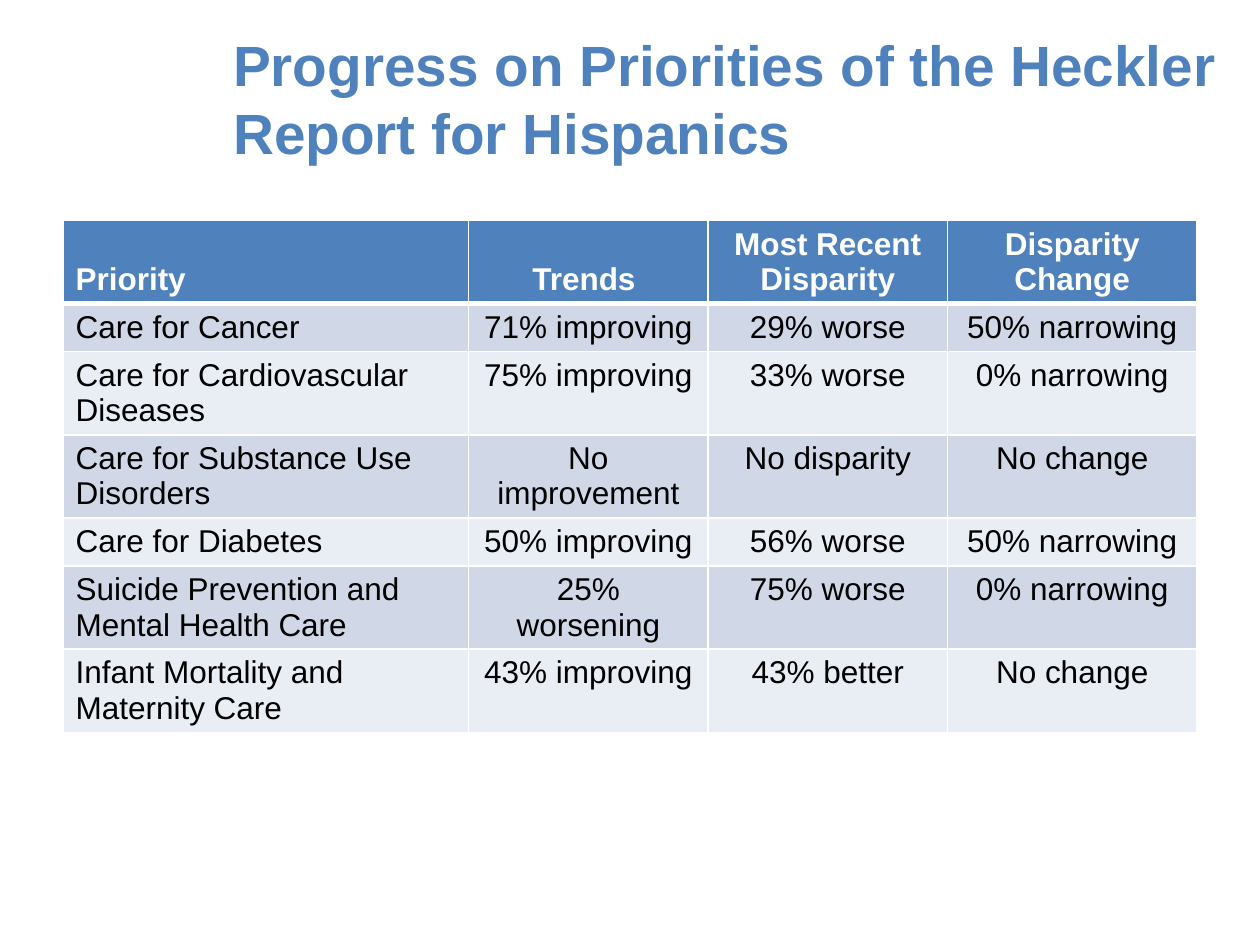
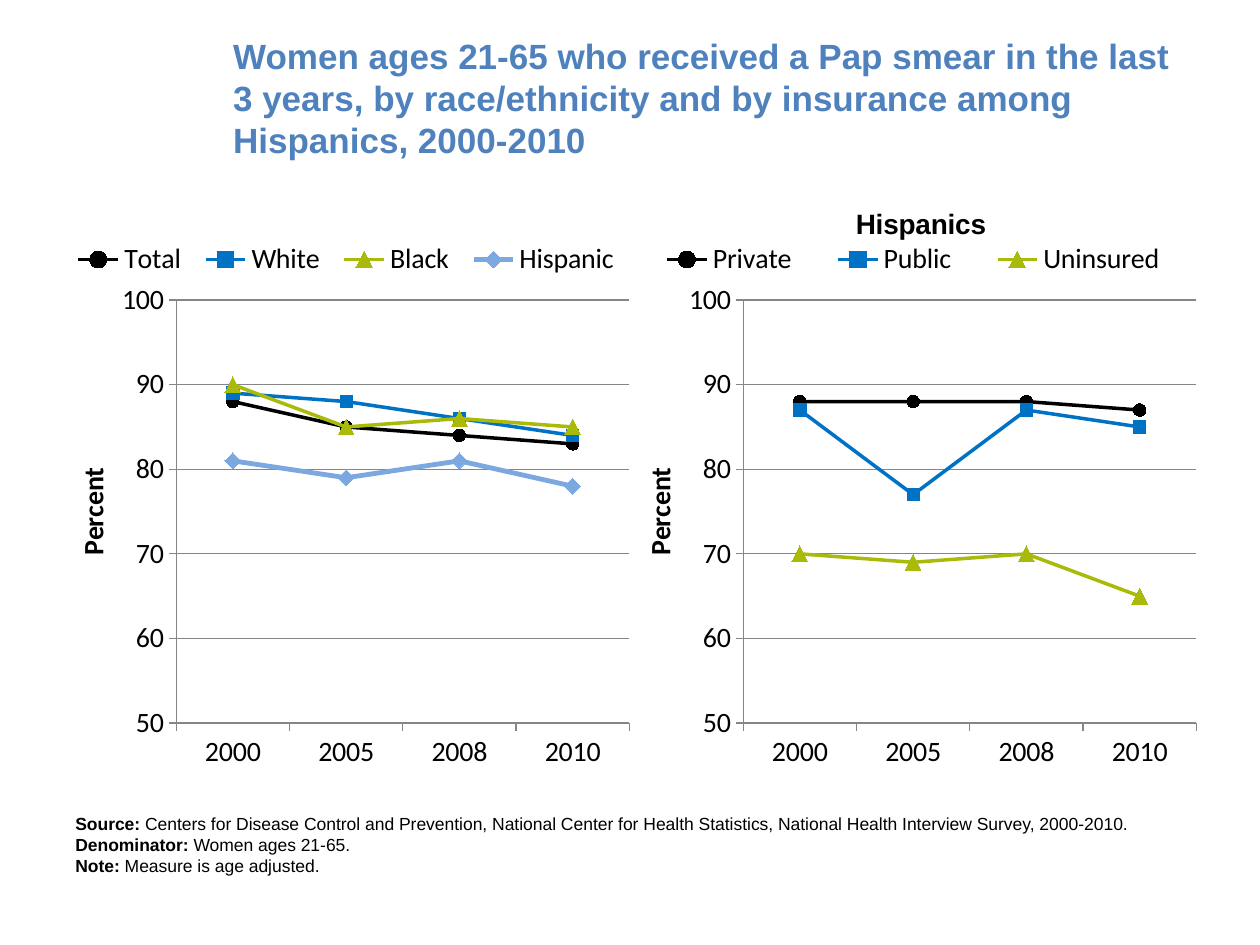
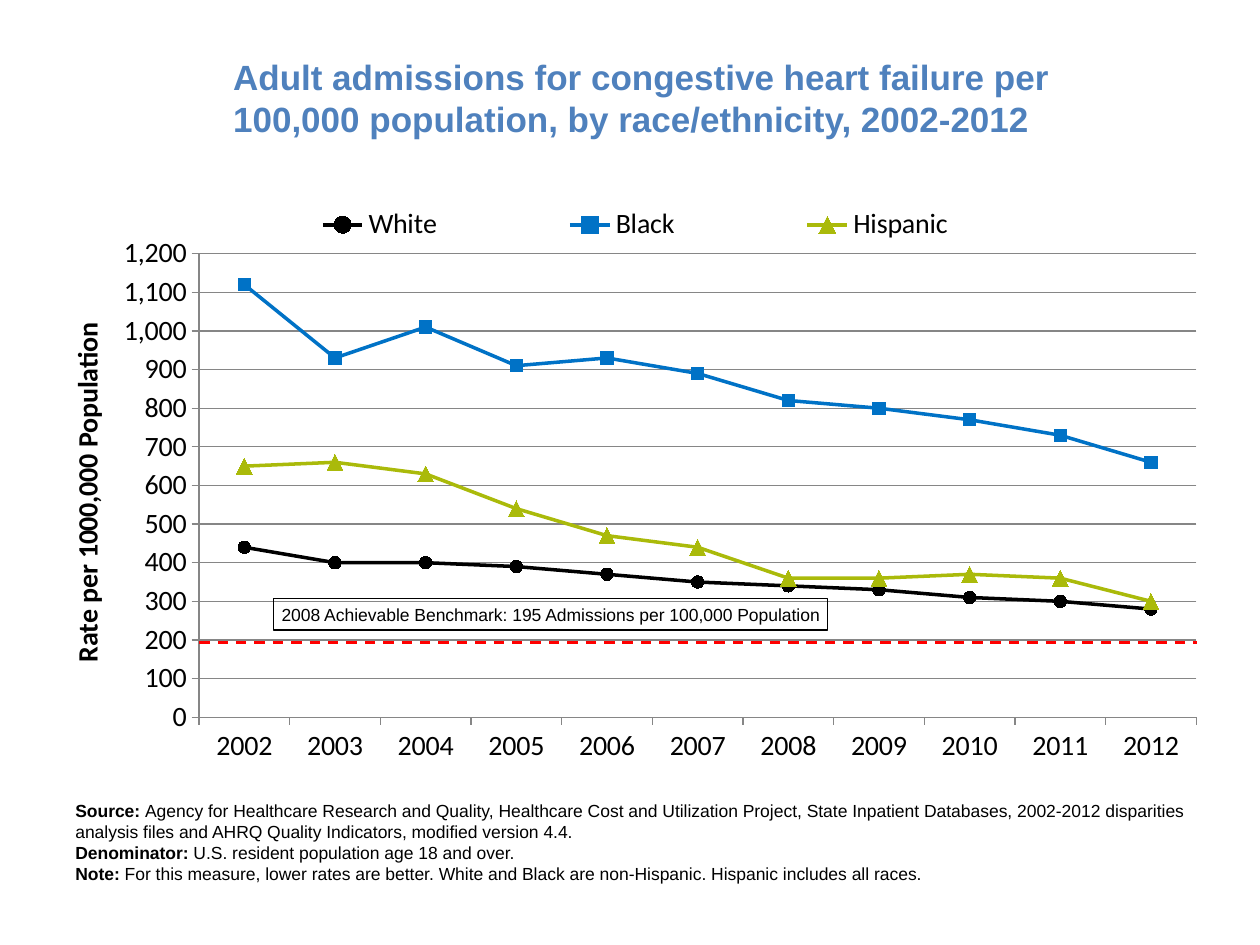
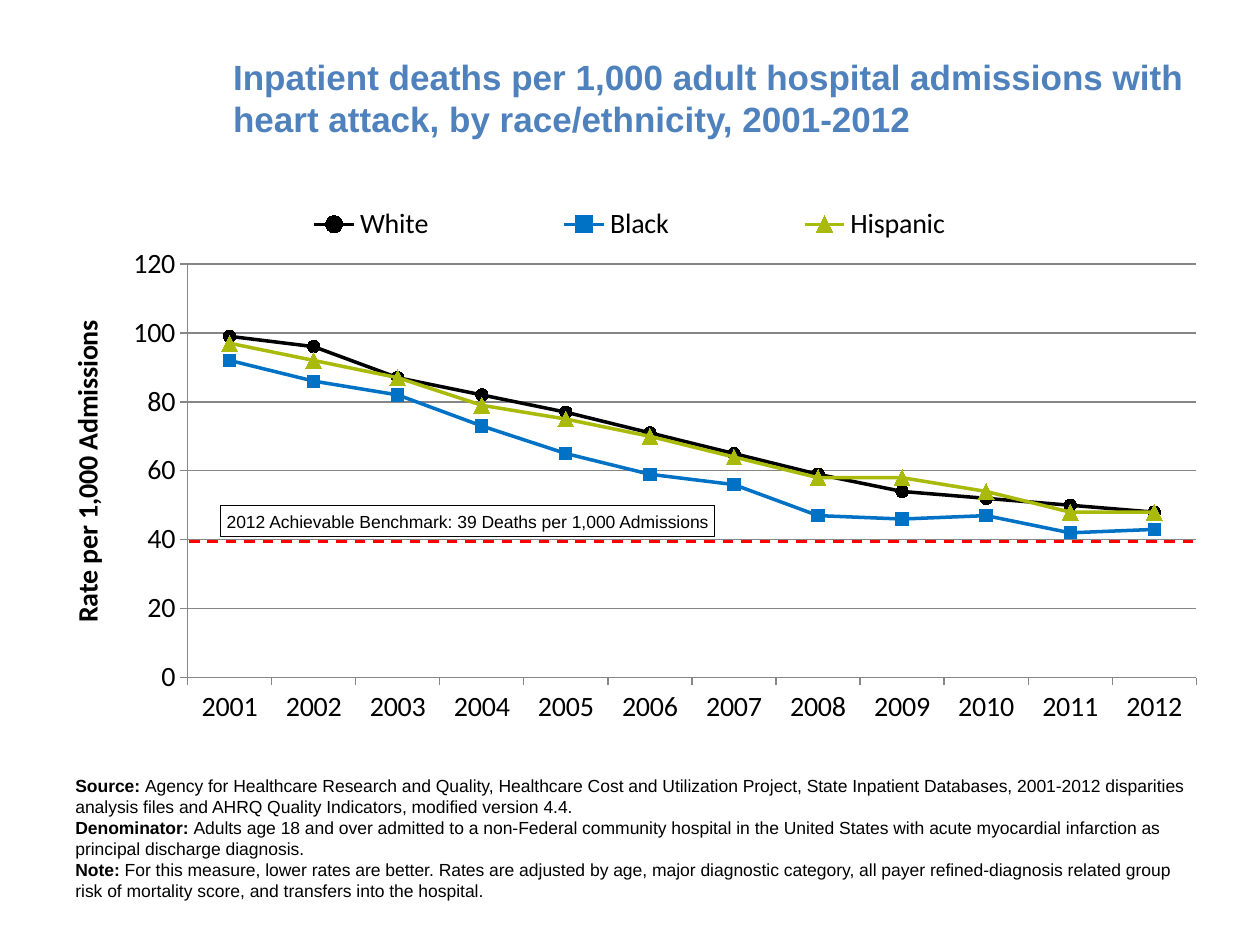
from lxml import etree
from pptx import Presentation
from pptx.chart import data as chart_data
from pptx.dml import color as dml_color
from pptx.enum import chart as charts, dml, shapes, text
from pptx.oxml import ns
from pptx.util import Pt

COLORS = {
    "accent": "4F81BD", "ink": "000000", "paper": "FFFFFF",
    "band_dark": "D0D8E8", "band_light": "E9EDF4", "grid": "868686",
    "blue": "0072C6", "olive": "AABA0A", "sky": "7BA8DF", "benchmark": "FF0000",
}
BODY_FONT, CHART_FONT = "Arial", "Calibri"
LEFT, WIDTH = 36, 648

# Series looks in drawing order: colour, line width, marker, marker size
MARKER = charts.XL_MARKER_STYLE
SERIES_LOOKS = [
    ("ink", 2, MARKER.CIRCLE, 7), ("blue", 2, MARKER.SQUARE, 7),
    ("olive", 2, MARKER.TRIANGLE, 9), ("sky", 2.75, MARKER.DIAMOND, 9),
]

PRIORITIES = [
    ("Priority", "Trends ", "Most Recent Disparity", "Disparity Change"),
    ("Care for Cancer", "71% improving", "29% worse", "50% narrowing"),
    ("Care for Cardiovascular Diseases", "75% improving", "33% worse", "0% narrowing"),
    ("Care for Substance Use Disorders", "No improvement", "No disparity", "No change"),
    ("Care for Diabetes", "50% improving", "56% worse", "50% narrowing"),
    ("Suicide Prevention and Mental Health Care", "25% worsening", "75% worse", "0% narrowing"),
    ("Infant Mortality and Maternity Care", "43% improving", "43% better", "No change"),
]
SURVEY_YEARS = ["2000", "2005", "2008", "2010"]
PAP_BY_RACE = {
    "Total": [88, 85, 84, 83], "White": [89, 88, 86, 84],
    "Black": [90, 85, 86, 85], "Hispanic": [81, 79, 81, 78],
}
PAP_BY_INSURANCE = {
    "Private": [88, 88, 88, 87], "Public": [87, 77, 87, 85],
    "Uninsured": [70, 69, 70, 65],
}
HEART_FAILURE = {
    "White": [440, 400, 400, 390, 370, 350, 340, 330, 310, 300, 280],
    "Black": [1120, 930, 1010, 910, 930, 890, 820, 800, 770, 730, 660],
    "Hispanic": [650, 660, 630, 540, 470, 440, 360, 360, 370, 360, 300],
}
HEART_ATTACK = {
    "White": [99, 96, 87, 82, 77, 71, 65, 59, 54, 52, 50, 48],
    "Black": [92, 86, 82, 73, 65, 59, 56, 47, 46, 47, 42, 43],
    "Hispanic": [97, 92, 87, 79, 75, 70, 64, 58, 58, 54, 48, 48],
}
INPATIENT_SOURCE = (
    "Agency for Healthcare Research and Quality, Healthcare Cost and Utilization "
    "Project, State Inpatient Databases, {}‐2012 disparities")
INPATIENT_SOURCE_END = "analysis files and AHRQ Quality Indicators, modified version 4.4."


def rgb(name):
    return dml_color.RGBColor.from_string(COLORS[name])


def points(*lengths):
    return [Pt(length) for length in lengths]


def style_font(font, size, color="ink", bold=False, name=BODY_FONT):
    font.name, font.size, font.bold = name, Pt(size), bold
    font.color.rgb = rgb(color)


def write(frame, *lines, align=text.PP_ALIGN.LEFT, bold=False, **style):
    """Fill a text frame; each line is a (bold label, plain rest) pair or a string."""
    for index, line in enumerate(lines):
        paragraph = frame.add_paragraph() if index else frame.paragraphs[0]
        paragraph.alignment = align
        runs = [(line, bold)] if isinstance(line, str) else zip(line, (True, False))
        for words, heavy in runs:
            run = paragraph.add_run()
            run.text = words
            style_font(run.font, bold=heavy, **style)


def new_slide(prs, heading, size=20, width=558):
    slide = prs.slides.add_slide(prs.slide_layouts[5])
    title = slide.shapes.title
    title.left, title.top, title.width, title.height = points(126, 21.6, width, 68.4)
    title.text_frame.vertical_anchor = text.MSO_ANCHOR.MIDDLE
    write(title.text_frame, heading, size=size, color="accent", bold=True)
    return slide


def add_sources(slide, top, height, *lines):
    box = slide.shapes.add_textbox(*points(LEFT, top, WIDTH, height))
    box.text_frame.word_wrap = True
    write(box.text_frame, *lines, size=10)


# Table
def set_borders(cell, **widths):
    for side, width in widths.items():
        line = etree.SubElement(cell._tc.get_or_add_tcPr(), ns.qn(f"a:ln{side}"), w=str(Pt(width)))
        fill = etree.SubElement(line, ns.qn("a:solidFill"))
        etree.SubElement(fill, ns.qn("a:srgbClr"), val=COLORS["paper"])


def add_priorities(slide):
    widths, heights = (231.8, 136.8, 136.8, 142.6), (47, 27.4, 47.4, 47.4, 27.4, 47.4, 47.4)
    frame = slide.shapes.add_table(
        len(heights), len(widths), *points(LEFT, 126, sum(widths), sum(heights)))
    table = frame.table
    for column, width in zip(table.columns, widths):
        column.width = Pt(width)
    for row, height in zip(table.rows, heights):
        row.height = Pt(height)
    for r, entries in enumerate(PRIORITIES):
        header = r == 0
        band = "accent" if header else "band_dark" if r % 2 else "band_light"
        for c, entry in enumerate(entries):
            cell = table.cell(r, c)
            set_borders(cell, L=1, R=1, T=3 if r == 1 else 1, B=3 if header else 1)
            cell.fill.solid()
            cell.fill.fore_color.rgb = rgb(band)
            cell.vertical_anchor = text.MSO_ANCHOR.BOTTOM if header else text.MSO_ANCHOR.TOP
            write(cell.text_frame, entry, size=18, bold=header,
                  color="paper" if header else "ink",
                  align=text.PP_ALIGN.CENTER if c else text.PP_ALIGN.LEFT)


# Charts
def place(element, after, x, y, w=None, h=None, inner=False):
    """Give a chart part a manual layout, in fractions of the chart."""
    for old in element.findall(ns.qn("c:layout")):
        element.remove(old)
    layout = etree.Element(ns.qn("c:layout"))
    manual = etree.SubElement(layout, ns.qn("c:manualLayout"))
    settings = [("layoutTarget", "inner" if inner else None), ("xMode", "edge"),
                ("yMode", "edge"), ("x", x), ("y", y), ("w", w), ("h", h)]
    for tag, value in settings:
        if value is not None:
            etree.SubElement(manual, ns.qn(f"c:{tag}"), val=str(value))
    previous = element.find(ns.qn(after)) if after else None
    element.insert(0 if previous is None else element.index(previous) + 1, layout)


def style_axis(axis):
    axis.major_tick_mark = charts.XL_TICK_MARK.OUTSIDE
    axis.minor_tick_mark = charts.XL_TICK_MARK.NONE
    style_font(axis.tick_labels.font, 16, name=CHART_FONT)
    axis.format.line.color.rgb = rgb("grid")
    axis.format.line.width = Pt(0.75)


def add_line_chart(slide, box, years, values, scale, unit, plot, legend, unit_at,
                   number_format="0", heading=None):
    data = chart_data.CategoryChartData(number_format=number_format)
    data.categories = years
    for name, numbers in values.items():
        data.add_series(name, numbers)
    chart = slide.shapes.add_chart(
        charts.XL_CHART_TYPE.LINE_MARKERS, *points(*box), data).chart
    style_font(chart.font, 16, name=CHART_FONT)

    chart.has_title = heading is not None
    if heading:
        write(chart.chart_title.text_frame, heading, size=16, bold=True)
        place(chart.chart_title._element, "c:tx", 0.39, 0)

    chart.has_legend = True
    chart.legend.position = charts.XL_LEGEND_POSITION.TOP
    chart.legend.include_in_layout = False
    style_font(chart.legend.font, 16, name=CHART_FONT)
    place(chart.legend._element, "c:legendPos", *legend)
    place(chart._chartSpace.chart.plotArea, None, *plot, inner=True)

    style_axis(chart.category_axis)
    rates = chart.value_axis
    style_axis(rates)
    rates.minimum_scale, rates.maximum_scale, rates.major_unit = scale
    rates.tick_labels.number_format = number_format
    rates.tick_labels.number_format_is_linked = False
    rates.has_major_gridlines = True
    rates.major_gridlines.format.line.color.rgb = rgb("grid")
    rates.major_gridlines.format.line.width = Pt(0.75)
    write(rates.axis_title.text_frame, unit, size=16, bold=True, name=CHART_FONT)
    place(rates.axis_title._element, "c:tx", *unit_at)

    chart.plots[0].vary_by_categories = False
    for series, (color, width, style, size) in zip(chart.plots[0].series, SERIES_LOOKS):
        series.smooth = False
        series.format.line.color.rgb = rgb(color)
        series.format.line.width = Pt(width)
        marker = series.marker
        marker.style, marker.size = style, size
        marker.format.fill.solid()
        marker.format.fill.fore_color.rgb = rgb(color)
        marker.format.line.color.rgb = rgb(color)


def add_benchmark(slide, line_left, line_top, label, label_box):
    line = slide.shapes.add_connector(
        shapes.MSO_CONNECTOR.STRAIGHT, *points(line_left, line_top, LEFT + WIDTH, line_top))
    line.line.color.rgb = rgb("benchmark")
    line.line.width = Pt(1.5)
    line.line.dash_style = dml.MSO_LINE.DASH
    etree.SubElement(line._element.spPr, ns.qn("a:effectLst"))

    tag = slide.shapes.add_shape(shapes.MSO_SHAPE.RECTANGLE, *points(*label_box))
    tag.shadow.inherit = False
    tag.fill.background()
    tag.line.color.rgb = rgb("ink")
    tag.line.width = Pt(0.75)
    tag.text_frame.word_wrap = False
    tag.text_frame.vertical_anchor = text.MSO_ANCHOR.MIDDLE
    write(tag.text_frame, label, size=10, align=text.PP_ALIGN.CENTER)


def main():
    prs = Presentation()
    prs.slide_width, prs.slide_height = points(720, 540)

    # Progress table
    slide = new_slide(prs, "Progress on Priorities of the Heckler Report for Hispanics",
                      size=32.4, width=588)
    add_priorities(slide)

    # Pap smears
    slide = new_slide(prs, "Women ages 21-65 who received a Pap smear in the last 3 years, "
                           "by race/ethnicity and by insurance among Hispanics, 2000-2010")
    half = WIDTH / 2
    for index, (values, heading) in enumerate([(PAP_BY_RACE, None),
                                               (PAP_BY_INSURANCE, "Hispanics")]):
        add_line_chart(slide, (LEFT + index * half, 115.2, half, 331.2), SURVEY_YEARS, values,
                       scale=(50, 100, 10), unit="Percent", heading=heading,
                       plot=(0.2, 0.17, 0.8, 0.73), legend=(0, 0.06, 1, 0.08),
                       unit_at=(0.01, 0.45))
    add_sources(
        slide, 460.8, 44,
        ("Source: ", "Centers for Disease Control and Prevention, National Center for Health "
                     "Statistics, National Health Interview Survey, 2000-2010."),
        ("Denominator: ", "Women ages 21-65."),
        ("Note:", " Measure is age adjusted."))

    # Heart failure admissions
    slide = new_slide(prs, "Adult admissions for congestive heart failure per 100,000 "
                           "population, by race/ethnicity, 2002-2012")
    add_line_chart(slide, (LEFT, 115.2, WIDTH, 331.2), [str(y) for y in range(2002, 2013)],
                   HEART_FAILURE, scale=(0, 1200, 100), unit="Rate per 1000,000 Population",
                   plot=(0.12, 0.09, 0.88, 0.8), legend=(0.12, 0, 0.77, 0.08),
                   unit_at=(0, 0.2), number_format="#,##0")
    add_sources(
        slide, 453.6, 55.4,
        ("Source: ", INPATIENT_SOURCE.format(2002)), INPATIENT_SOURCE_END,
        ("Denominator:", " U.S. resident population age 18 and over."),
        ("Note:", " For this measure, lower rates are better. White and Black are "
                  "non-Hispanic. Hispanic includes all races."))
    add_benchmark(slide, 113.8, 367.2,
                  "2008 Achievable Benchmark: 195 Admissions per 100,000 Population",
                  (156.2, 342, 316.8, 18))

    # Heart attack deaths
    slide = new_slide(prs, "Inpatient deaths per 1,000 adult hospital admissions with heart "
                           "attack, by race/ethnicity, 2001-2012")
    add_line_chart(slide, (LEFT, 115.2, WIDTH, 324), [str(y) for y in range(2001, 2013)],
                   HEART_ATTACK, scale=(0, 120, 20), unit="Rate per 1,000 Admissions",
                   plot=(0.11, 0.11, 0.89, 0.73), legend=(0.11, 0, 0.78, 0.08),
                   unit_at=(0, 0.2))
    add_sources(
        slide, 439.2, 80,
        ("Source: ", INPATIENT_SOURCE.format(2001)), INPATIENT_SOURCE_END,
        ("Denominator: ", "Adults age 18 and over admitted to a non-Federal community hospital "
                          "in the United States with acute myocardial infarction as principal "
                          "discharge diagnosis."),
        ("Note:", " For this measure, lower rates are better. Rates are adjusted by age, major "
                  "diagnostic category, all payer refined-diagnosis related group risk of "
                  "mortality score, and transfers into the hospital."))
    add_benchmark(slide, 108, 309.6,
                  "2012 Achievable Benchmark: 39 Deaths per 1,000 Admissions",
                  (126, 288.7, 282.2, 18))

    prs.save("out.pptx")


if __name__ == "__main__":
    main()
